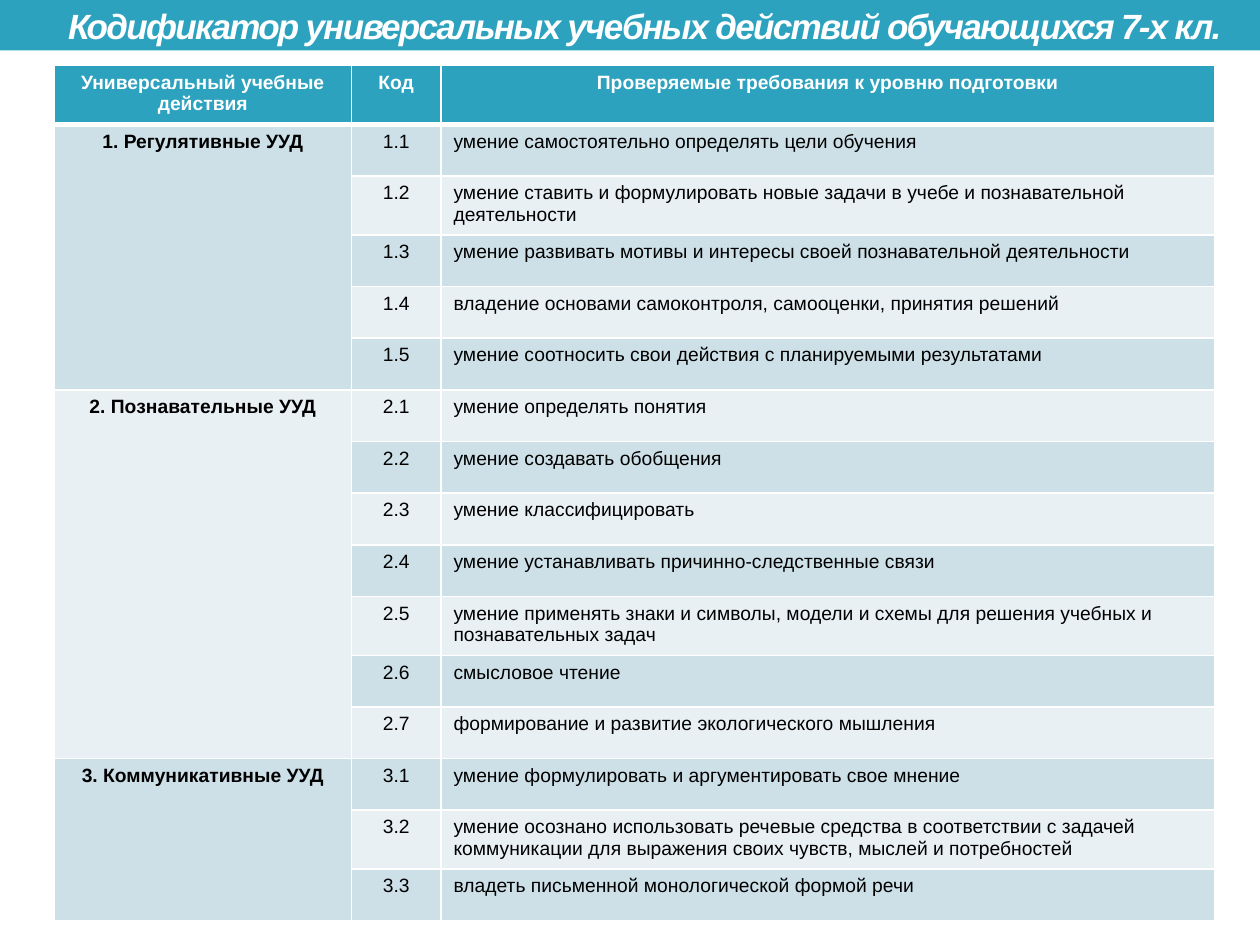
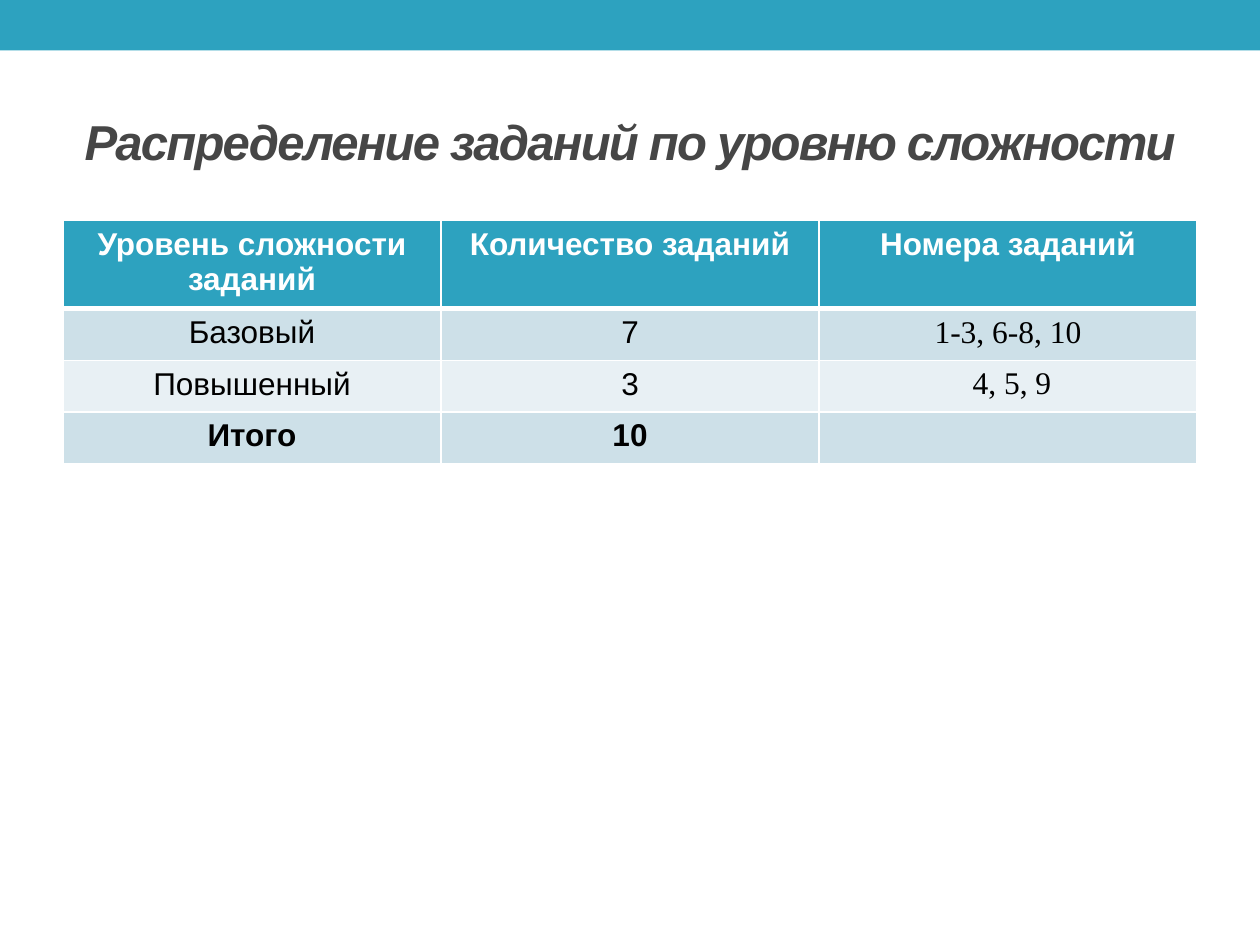
from dataclasses import dataclass

from lxml import etree
from pptx import Presentation
from pptx.dml.color import RGBColor
from pptx.enum.shapes import MSO_SHAPE
from pptx.enum.text import MSO_ANCHOR, PP_ALIGN
from pptx.oxml.ns import qn
from pptx.util import Inches, Pt

RECT = MSO_SHAPE.RECTANGLE
MIDDLE = MSO_ANCHOR.MIDDLE
LEFT, CENTER = PP_ALIGN.LEFT, PP_ALIGN.CENTER


@dataclass(frozen=True)
class Theme:
    accent: str = "2DA2BF"
    heading: str = "464646"
    text: str = "000000"
    white: str = "FFFFFF"
    bands: tuple = ("E8F0F4", "CDE0E8")
    font: str = "Arial"
    serif: str = "Times New Roman"
    title_small: int = 20
    title_large: int = 28
    table_small: int = 11
    table_large: int = 18
    title_spacing: int = -100
    thin: int = 1
    thick: int = 3


class Deck:
    def __init__(self, theme):
        self.theme = theme
        self.prs = Presentation()
        self.prs.slide_width, self.prs.slide_height = Inches(10), Inches(7.5)
        self.slide = None

    def new_slide(self):
        """Start a blank slide with the coloured band on top."""
        self.slide = self.prs.slides.add_slide(self.prs.slide_layouts[6])
        sp = self.slide.shapes.add_shape(RECT, 0, 0, self.prs.slide_width, Inches(0.4))
        sp.shadow.inherit = False
        sp.fill.solid()
        sp.fill.fore_color.rgb = RGBColor.from_string(self.theme.accent)
        sp.line.fill.background()

    def style(self, p, size, color, bold=False, font=None, align=CENTER):
        p.alignment = align
        p.font.name = font or self.theme.font
        p.font.size = Pt(size)
        p.font.bold = bold
        p.font.color.rgb = RGBColor.from_string(color)

    def title(self, text, left, top, width, size, color):
        box = self.slide.shapes.add_textbox(
            Inches(left), Inches(top), Inches(width), Inches(1.08))
        tf = box.text_frame
        tf.word_wrap = True
        tf.vertical_anchor = MIDDLE
        tf.margin_left = tf.margin_right = 0
        p = tf.paragraphs[0]
        self.style(p, size, color, bold=True)
        p.font.italic = True
        r = p.add_run()
        r.text = text
        r._r.get_or_add_rPr().set("spc", str(self.theme.title_spacing))

    def borders(self, cell, top, bottom):
        """Draw white cell borders; top and bottom are widths in points."""
        thin = self.theme.thin
        tc_pr = cell._tc.get_or_add_tcPr()
        sides = {"lnL": thin, "lnR": thin, "lnT": top, "lnB": bottom}
        for i, (side, width) in enumerate(sides.items()):
            ln = etree.Element(qn(f"a:{side}"), w=str(Pt(width)))
            fill = etree.SubElement(ln, qn("a:solidFill"))
            etree.SubElement(fill, qn("a:srgbClr"), val=self.theme.white)
            tc_pr.insert(i, ln)

    def table(self, rows, left, top, widths, size, is_bold, aligns, fonts):
        """Add a banded table; is_bold(row, column) picks bold body cells."""
        t = self.theme
        row_height = Inches(0.41)
        table = self.slide.shapes.add_table(
            len(rows), len(widths), Inches(left), Inches(top),
            Inches(sum(widths)), row_height * len(rows)).table
        for column, width in zip(table.columns, widths):
            column.width = Inches(width)
        for i, row in enumerate(rows):
            table.rows[i].height = row_height
            header = i == 0
            for j, text in enumerate(row):
                cell = table.cell(i, j)
                self.borders(cell, top=t.thick if i == 1 else t.thin,
                             bottom=t.thick if header else t.thin)
                cell.fill.solid()
                cell.fill.fore_color.rgb = RGBColor.from_string(
                    t.accent if header else t.bands[i % 2])
                p = cell.text_frame.paragraphs[0]
                if text:
                    p.add_run().text = text
                if header:
                    self.style(p, size, t.white, bold=True)
                else:
                    self.style(p, size, t.text, is_bold(i, j), fonts[j], aligns[j])
        return table


SKILL_GROUPS = {
    "Регулятивные УУД": [
        "умение самостоятельно определять цели обучения",
        "умение ставить и формулировать новые задачи в учебе и познавательной деятельности",
        "умение развивать мотивы и интересы своей познавательной деятельности",
        "владение основами самоконтроля, самооценки, принятия решений",
        "умение соотносить свои действия с планируемыми результатами",
    ],
    "Познавательные УУД": [
        "умение определять понятия",
        "умение создавать обобщения",
        "умение классифицировать",
        "умение устанавливать причинно-следственные связи",
        "умение применять знаки и символы, модели и схемы для решения учебных и "
        "познавательных задач",
        "смысловое чтение",
        "формирование и развитие экологического мышления",
    ],
    "Коммуникативные УУД": [
        "умение формулировать и аргументировать свое мнение",
        "умение осознано использовать речевые средства в соответствии с задачей "
        "коммуникации для выражения своих чувств, мыслей и потребностей",
        "владеть письменной монологической формой речи",
    ],
}

DIFFICULTY_ROWS = [
    ("Уровень сложности заданий", "Количество заданий", "Номера заданий"),
    ("Базовый", "7", "1-3, 6-8, 10"),
    ("Повышенный", "3", " 4, 5, 9"),
    ("Итого", "10", ""),
]


def codifier_slide(deck):
    t = deck.theme
    deck.new_slide()
    deck.title("Кодификатор универсальных учебных действий обучающихся 7-х кл.",
               0.43, -0.34, 9.37, t.title_small, t.white)
    rows = [("Универсальный учебные действия", "Код",
             "Проверяемые требования к уровню подготовки")]
    spans = []
    for n, (group, skills) in enumerate(SKILL_GROUPS.items(), 1):
        spans.append((len(rows), len(rows) + len(skills) - 1))
        for k, skill in enumerate(skills, 1):
            rows.append((f"{n}. {group}" if k == 1 else "", f"{n}.{k}", skill))
    table = deck.table(rows, 0.43, 0.52, (2.36, 0.71, 6.14), t.table_small,
                       is_bold=lambda i, j: j == 0,
                       aligns=(CENTER, CENTER, LEFT), fonts=(t.font,) * 3)
    for first, last in spans:
        table.cell(first, 0).merge(table.cell(last, 0))


def difficulty_slide(deck):
    t = deck.theme
    deck.new_slide()
    deck.title("Распределение заданий по уровню сложности",
               0.5, 0.58, 9, t.title_large, t.heading)
    total_row = len(DIFFICULTY_ROWS) - 1
    deck.table(DIFFICULTY_ROWS, 0.5, 1.75, (3, 3, 3), t.table_large,
               is_bold=lambda i, j: i == total_row,
               aligns=(CENTER,) * 3, fonts=(t.font, t.font, t.serif))


def main():
    deck = Deck(Theme())
    codifier_slide(deck)
    difficulty_slide(deck)
    deck.prs.save("out.pptx")


if __name__ == "__main__":
    main()
